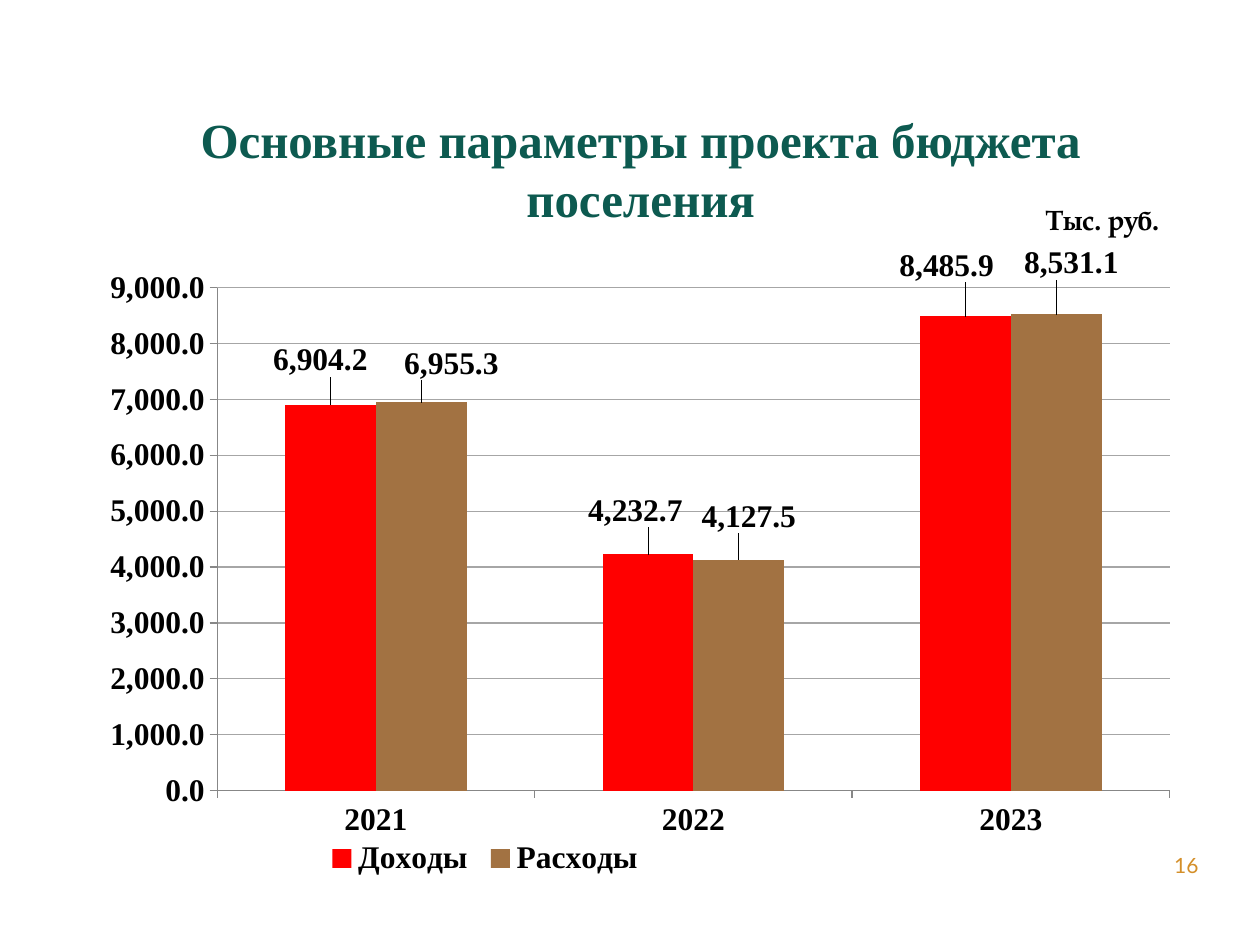
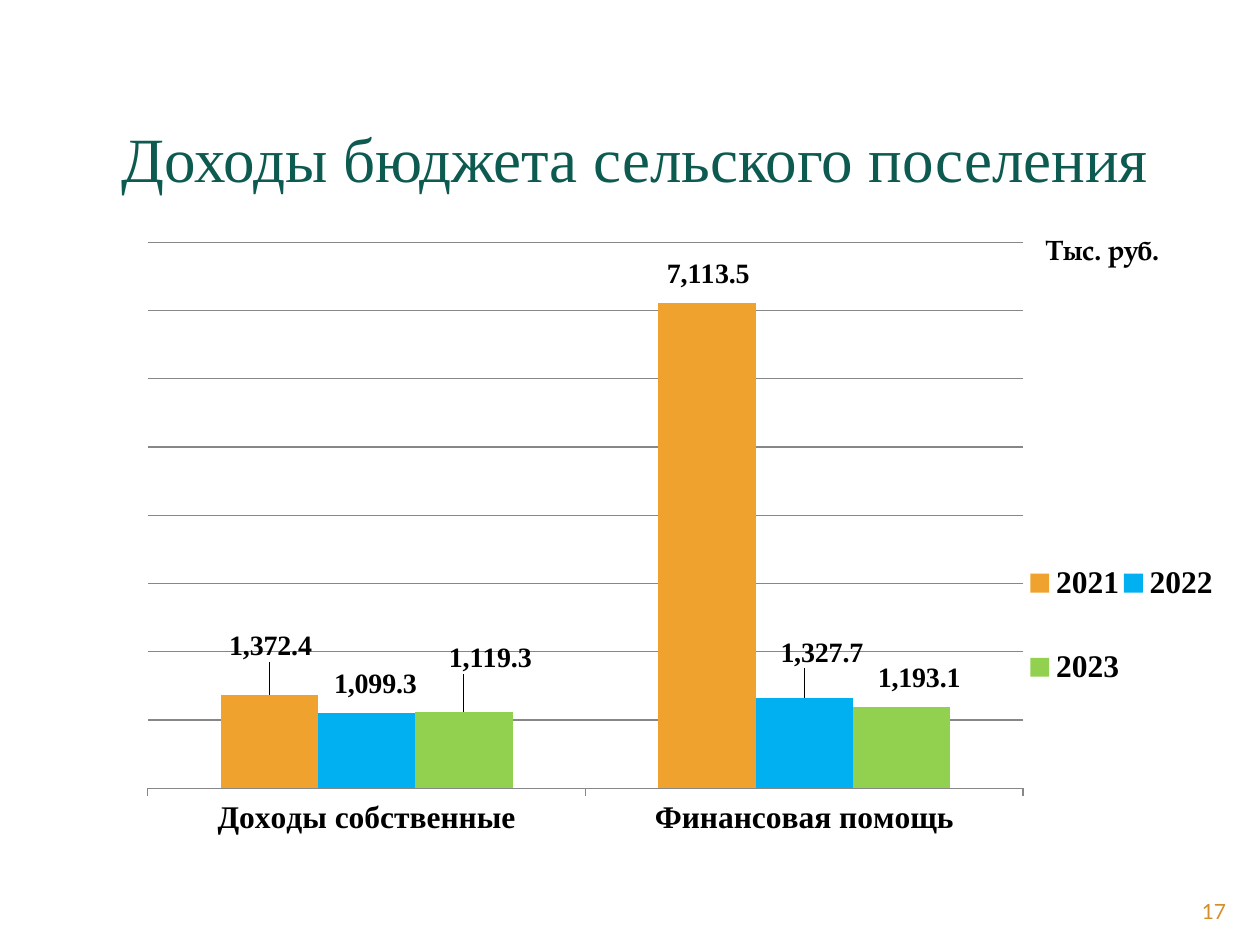
from dataclasses import dataclass

import lxml.etree
import pptx
import pptx.chart.data
import pptx.dml.color
import pptx.enum.chart
import pptx.enum.text
import pptx.oxml.ns
import pptx.util

SLIDE_WIDTH, SLIDE_HEIGHT = pptx.util.Inches(10), pptx.util.Inches(7.5)
COLUMNS, ROWS = 100, 75  # slide grid


@dataclass(frozen=True)
class Theme:
    heading: str = "0D5A50"
    number: str = "D48F29"
    ink: str = "000000"
    grid: str = "A6A6A6"
    axis: str = "878787"
    income: str = "FF0000"
    spending: str = "A27242"
    years: tuple = ("F0A22E", "00B0F0", "92D050")
    serif: str = "Times New Roman"
    unit_font: str = "TeX Gyre Pagella"
    number_font: str = "Lato"
    chart_size: int = 18
    value_size: int = 16
    unit_size: int = 16
    number_size: int = 12
    value_format: str = "#,##0.0"


THEME = Theme()
ALIGN = pptx.enum.text.PP_ALIGN


def rgb(code):
    return pptx.dml.color.RGBColor.from_string(code)


def place(left, top, width, height):
    """Turn grid columns and rows into slide lengths."""
    column, row = SLIDE_WIDTH / COLUMNS, SLIDE_HEIGHT / ROWS
    return [round(n) for n in (left * column, top * row, width * column, height * row)]


def style_font(font, size, color=THEME.ink, name=THEME.serif, bold=True):
    font.size = pptx.util.Pt(size)
    font.color.rgb = rgb(color)
    font.name = name
    font.bold = bold


# Text elements
def add_text(slide, box, text, align, wrap=True, inset=0.05, **style):
    frame = slide.shapes.add_textbox(*place(*box)).text_frame
    frame.word_wrap = wrap
    frame.margin_top = pptx.util.Inches(inset)
    paragraph = frame.paragraphs[0]
    paragraph.alignment = align
    run = paragraph.add_run()
    run.text = text
    style_font(run.font, **style)


def add_title(slide, box, text, size, bold):
    add_text(slide, box, text, ALIGN.CENTER, wrap=False, inset=0.09,
             size=size, color=THEME.heading, bold=bold)


def add_unit(slide, top):
    add_text(slide, (82, top, 16.4, 3.7), "Тыс. руб.", ALIGN.LEFT,
             size=THEME.unit_size, name=THEME.unit_font)


def add_slide_number(slide, box, number):
    add_text(slide, box, str(number), ALIGN.RIGHT, size=THEME.number_size,
             color=THEME.number, name=THEME.number_font, bold=False)


# Chart elements
def set_layout(parent, index, inner=False, **shares):
    """Place a chart part by shares of the chart's size."""
    qn = pptx.oxml.ns.qn
    for old in parent.findall(qn("c:layout")):
        parent.remove(old)
    layout = lxml.etree.Element(qn("c:layout"))
    manual = lxml.etree.SubElement(layout, qn("c:manualLayout"))
    settings = {"layoutTarget": "inner"} if inner else {}
    if "w" in shares:
        settings.update(xMode="edge", yMode="edge")
    settings.update(shares)
    for tag, value in settings.items():
        lxml.etree.SubElement(manual, qn(f"c:{tag}")).set("val", str(value))
    parent.insert(index, layout)


def style_axes(chart, maximum, grid_color, show_values):
    category_axis, value_axis = chart.category_axis, chart.value_axis
    value_axis.minimum_scale, value_axis.maximum_scale = 0, maximum
    value_axis.major_unit = 1000
    value_axis.visible = show_values
    value_axis.tick_labels.number_format = THEME.value_format
    value_axis.tick_labels.number_format_is_linked = False
    value_axis.has_major_gridlines = True
    lines = ((value_axis.major_gridlines, grid_color),
             (value_axis, THEME.axis), (category_axis, THEME.axis))
    for part, color in lines:
        part.format.line.color.rgb = rgb(color)
        part.format.line.width = pptx.util.Pt(0.75)


def add_value_labels(chart, offsets, size, chart_columns, chart_rows):
    """Label every column, shifted by (columns, rows) from its outer end."""
    outside = pptx.enum.chart.XL_LABEL_POSITION.OUTSIDE_END
    for series in chart.plots[0].series:
        labels = series.data_labels
        labels.show_value = True
        labels.number_format = THEME.value_format
        labels.number_format_is_linked = False
        labels.position = outside
        style_font(labels.font, size)
        for index in range(len(series.values)):
            label = series.points[index].data_label
            style_font(label.font, size)
            label.position = outside
    for label, (right, down) in zip(chart.element.xpath(".//c:dLbl"), offsets):
        set_layout(label, 1, x=right / chart_columns, y=down / chart_rows)


def add_column_chart(slide, box, categories, series, maximum, plot, legend,
                     legend_side, offsets, label_size, grid_color, show_values=True):
    data = pptx.chart.data.CategoryChartData(number_format=THEME.value_format)
    data.categories = categories
    for name, values, _ in series:
        data.add_series(name, values)
    kind = pptx.enum.chart.XL_CHART_TYPE.COLUMN_CLUSTERED
    chart = slide.shapes.add_chart(kind, *place(*box), data).chart
    chart.has_title = False
    style_font(chart.font, THEME.chart_size)

    columns = chart.plots[0]
    columns.vary_by_categories = False
    columns.gap_width, columns.overlap = 150, 0
    for drawn, (_, _, color) in zip(columns.series, series):
        drawn.format.fill.solid()
        drawn.format.fill.fore_color.rgb = rgb(color)
    style_axes(chart, maximum, grid_color, show_values)
    add_value_labels(chart, offsets, label_size, *box[2:])

    chart.has_legend = True
    chart.legend.position = legend_side
    chart.legend.include_in_layout = False
    style_font(chart.legend.font, THEME.chart_size)
    sides = "xywh"
    set_layout(chart.element.xpath(".//c:plotArea")[0], 0, inner=True,
               **dict(zip(sides, plot)))
    set_layout(chart.element.xpath(".//c:legend")[0], 1, **dict(zip(sides, legend)))


# Slides
def build_budget_slide(slide):
    add_title(slide, (10.2, 7.8, 81.3, 8.3),
              "Основные параметры проекта бюджета поселения", 28, True)
    add_slide_number(slide, (71.7, 67.2, 24.4, 6.3), 16)
    add_column_chart(
        slide, (7, 19.5, 87.5, 52.3), ("2021", "2022", "2023"),
        [("Доходы", (6904.2, 4232.7, 8485.9), THEME.income),
         ("Расходы", (6955.3, 4127.5, 8531.1), THEME.spending)],
        maximum=9000, plot=(0.117, 0.064, 0.864, 0.763),
        legend=(0.21, 0.9, 0.3, 0.06),
        legend_side=pptx.enum.chart.XL_LEGEND_POSITION.BOTTOM,
        offsets=[(-0.8, -1.8), (-1, -1.7), (-1.5, -2.3),
                 (2.4, -1.3), (0.8, -1.7), (1.2, -2.3)],
        label_size=THEME.chart_size, grid_color=THEME.grid)
    add_unit(slide, 15.6)


def build_income_slide(slide):
    add_title(slide, (3.9, 8.6, 93, 8.4), "Доходы бюджета сельского поселения", 36, False)
    add_unit(slide, 18)
    add_slide_number(slide, (90, 70.8, 8.3, 2.7), 17)
    values = ((1372.4, 7113.5), (1099.3, 1327.7), (1119.3, 1193.1))
    add_column_chart(
        slide, (2.3, 15.3, 95.3, 59.7), ("Доходы собственные", "Финансовая помощь"),
        list(zip(("2021", "2022", "2023"), values, THEME.years)),
        maximum=8000, plot=(0.099, 0.066, 0.729, 0.726),
        legend=(0.83, 0.43, 0.16, 0.29),
        legend_side=pptx.enum.chart.XL_LEGEND_POSITION.RIGHT,
        offsets=[(0.1, -2.2), (0.1, -0.6), (0.7, -0.7),
                 (1.4, -1.9), (2.1, -2.6), (1.4, -0.6)],
        label_size=THEME.value_size, grid_color=THEME.axis, show_values=False)


def main():
    deck = pptx.Presentation()
    deck.slide_width, deck.slide_height = SLIDE_WIDTH, SLIDE_HEIGHT
    for build in (build_budget_slide, build_income_slide):
        build(deck.slides.add_slide(deck.slide_layouts[6]))
    deck.save("out.pptx")


if __name__ == "__main__":
    main()
